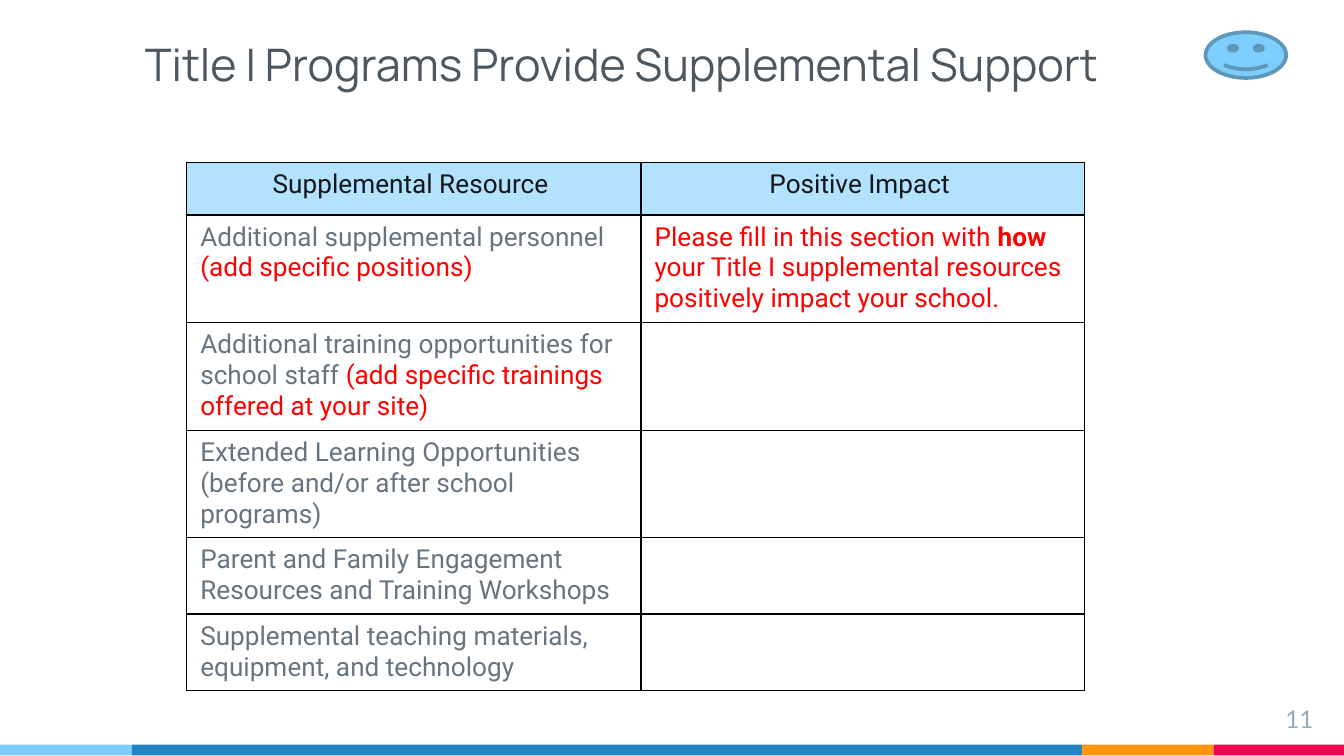
from lxml.etree import SubElement
from pptx import Presentation
from pptx.dml.color import RGBColor
from pptx.enum.shapes import MSO_SHAPE
from pptx.enum.text import MSO_ANCHOR, PP_ALIGN
from pptx.oxml.ns import qn
from pptx.util import Inches, Pt

GRAY, RED, BLACK = "677480", "FF0000", "000000"
SKY, PALE = "7ECEFD", "B2E2FE"


def paint(part, color):
    part.solid()
    part.fore_color.rgb = RGBColor.from_string(color)


def write(frame, *runs, font="Roboto", size=14, color=GRAY, align=PP_ALIGN.LEFT):
    frame.word_wrap = True
    para = frame.paragraphs[0]
    para.alignment = align
    for words, *style in runs:
        run = para.add_run()
        run.text = words
        run.font.name = font
        run.font.size = Pt(size)
        run.font.bold = "bold" in style
        tint = next((item for item in style if item != "bold"), color)
        run.font.color.rgb = RGBColor.from_string(tint)


def add_text(slide, box, words, anchor=MSO_ANCHOR.TOP, **style):
    frame = slide.shapes.add_textbox(*map(Inches, box)).text_frame
    frame.margin_left = frame.margin_right = Inches(0.1)
    frame.margin_top = frame.margin_bottom = Inches(0.1)
    frame.vertical_anchor = anchor
    write(frame, (words,), **style)


def add_shape(slide, kind, box, fill, line=None, width=2):
    shape = slide.shapes.add_shape(kind, *map(Inches, box))
    shape.shadow.inherit = False
    paint(shape.fill, fill)
    if line:
        paint(shape.line.fill, line)
        shape.line.width = Pt(width)
    else:
        shape.line.fill.background()


def add_bar(slide):
    left = 0
    for width, color in ((0.98, SKY), (7.07, "2185C5"), (0.98, "FF9715"), (0.97, "F20253")):
        add_shape(slide, MSO_SHAPE.RECTANGLE, (left, 5.54, width, 0.08), color)
        left += width


def add_border(cell):
    props = cell._tc.get_or_add_tcPr()
    for index, side in enumerate(("a:lnL", "a:lnR", "a:lnT", "a:lnB")):
        line = props.makeelement(qn(side), {"w": str(Pt(0.75))})
        fill = SubElement(line, qn("a:solidFill"))
        SubElement(fill, qn("a:srgbClr"), val=BLACK)
        props.insert(index, line)


def add_grid(slide, rows, box, widths, heights):
    holder = slide.shapes.add_table(len(rows), len(widths), *map(Inches, box))
    table = holder.table
    table.horz_banding = False
    for column, width in zip(table.columns, widths):
        column.width = Inches(width)
    for index, (row, height) in enumerate(zip(rows, heights)):
        table.rows[index].height = Inches(height)
        for spot, runs in enumerate(row):
            cell = table.cell(index, spot)
            if index == 0:
                paint(cell.fill, PALE)
                write(cell.text_frame, *runs, color="13171A", align=PP_ALIGN.CENTER)
            else:
                cell.fill.background()
                write(cell.text_frame, *runs)
            add_border(cell)
    holder.height = Inches(box[3])


def main():
    deck = Presentation()
    deck.slide_width, deck.slide_height = Inches(10), Inches(10 * 9 / 16)
    slide = deck.slides.add_slide(deck.slide_layouts[6])
    add_bar(slide)
    add_text(slide, (0.98, 0.21, 7.67, 0.56),
             "Title I Programs Provide Supplemental Support",
             anchor=MSO_ANCHOR.BOTTOM, font="Manrope", size=24, color="4D5760")
    add_text(slide, (9.27, 5.14, 0.6, 0.34), "11",
             font="Lato", size=13, color="97ABBC", align=PP_ALIGN.RIGHT)
    rows = [
        ([("Supplemental Resource ",)], [("Positive Impact ",)]),
        ([("Additional supplemental personnel ",), ("(add specific positions)", RED)],
         [("Please fill in this section with ", RED), ("how", RED, "bold"),
          (" your Title I supplemental resources positively impact your school.", RED)]),
        ([("Additional training opportunities for school staff ",),
          ("(add specific trainings offered at your site)", RED)], []),
        ([("Extended Learning Opportunities (before and/or after school programs)",)], []),
        ([("Parent and Family Engagement Resources and Training Workshops",)], []),
        ([("Supplemental teaching materials, equipment, and technology",)], []),
    ]
    add_grid(slide, rows, (1.39, 1.21, 6.68, 3.69), (3.38, 3.3),
             (0.39, 0.58, 0, 0.39, 0.39, 0.39))
    add_shape(slide, MSO_SHAPE.SMILEY_FACE, (8.97, 0.24, 0.6, 0.34), SKY, line="5D98BB")
    deck.save("out.pptx")


if __name__ == "__main__":
    main()
